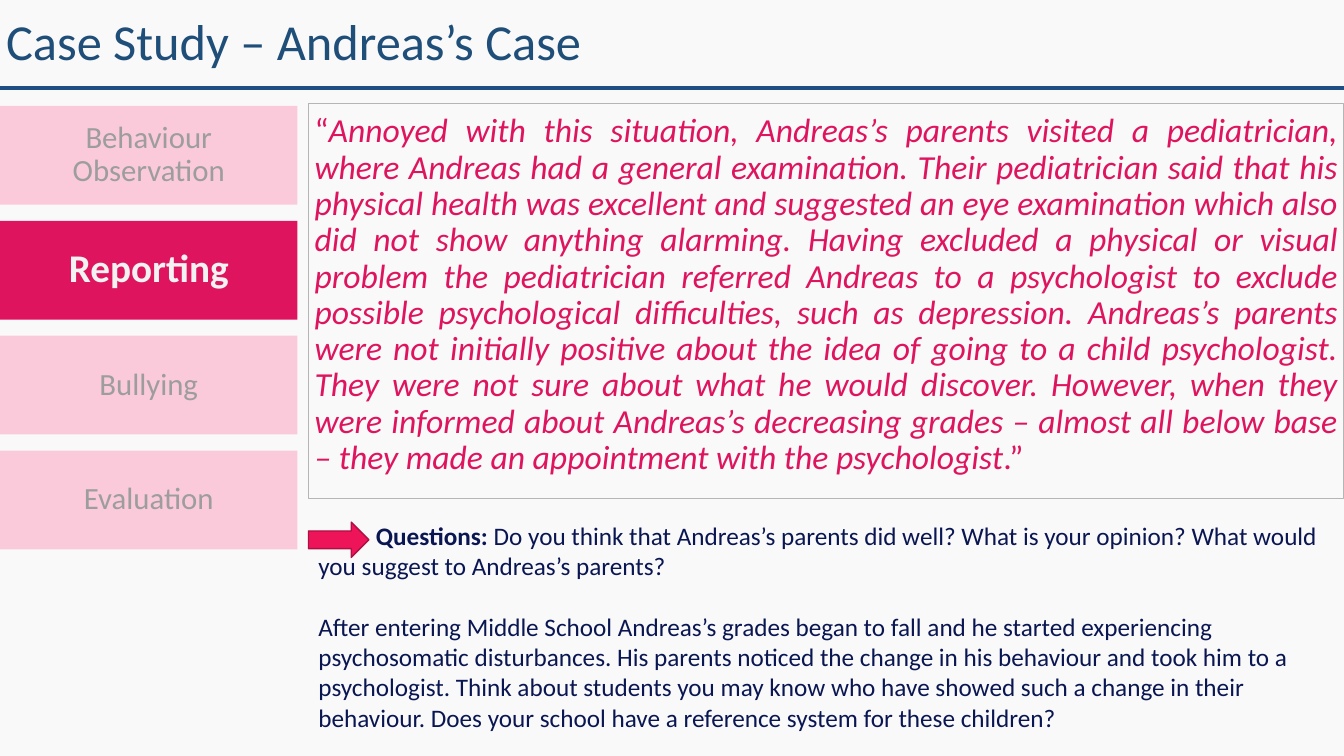
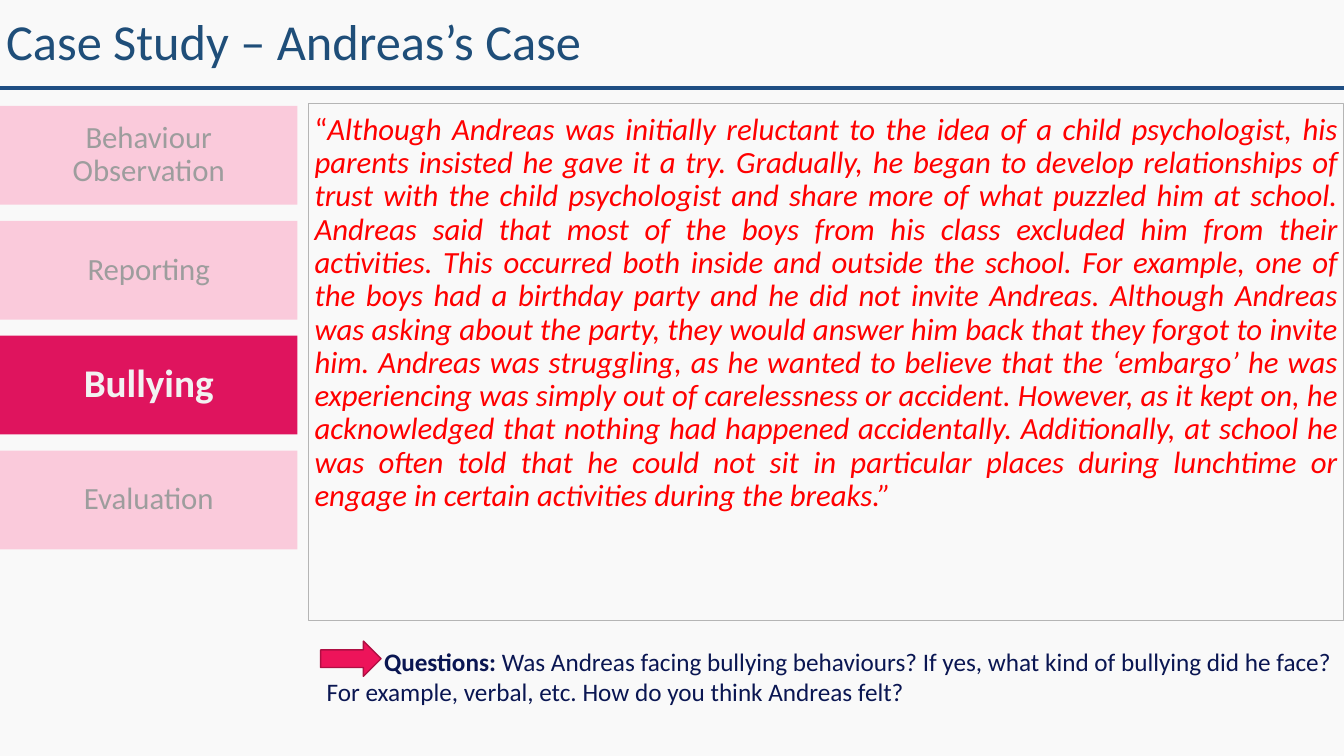
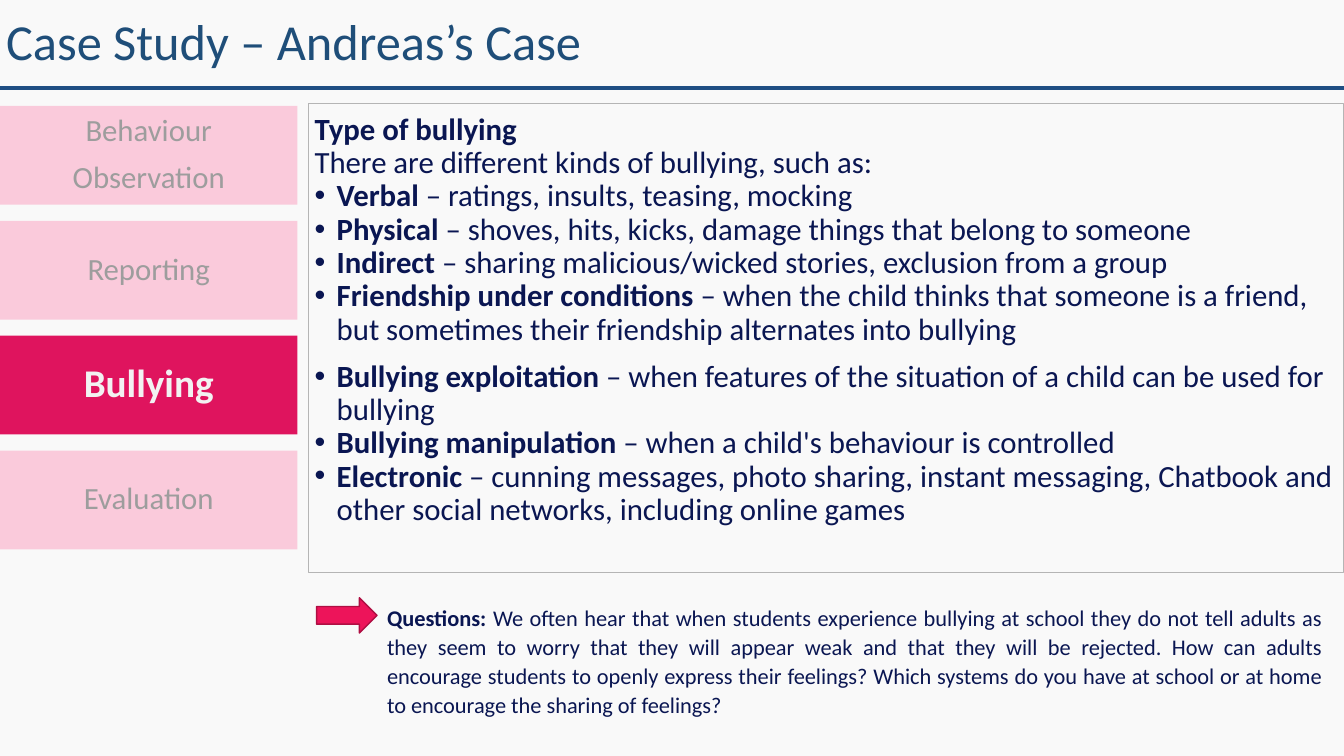
from lxml import etree
from pptx import Presentation
from pptx.dml.color import RGBColor
from pptx.enum.shapes import MSO_CONNECTOR, MSO_SHAPE
from pptx.enum.text import MSO_ANCHOR, MSO_AUTO_SIZE, PP_ALIGN
from pptx.oxml.ns import qn
from pptx.util import Pt

PX = 9144  # 100 px to the inch
W, H = 1333, 750
LEFT, CENTER, JUSTIFY = PP_ALIGN.LEFT, PP_ALIGN.CENTER, PP_ALIGN.JUSTIFY
TOP, MIDDLE = MSO_ANCHOR.TOP, MSO_ANCHOR.MIDDLE

PAPER = RGBColor(0xF9, 0xF9, 0xF9)
RULE_BLUE = RGBColor(0x1F, 0x4E, 0x83)
TITLE_BLUE = RGBColor(0x1F, 0x4E, 0x79)
NAVY = RGBColor(0x0A, 0x16, 0x52)
PINK = RGBColor(0xFA, 0xCA, 0xDB)
MAGENTA = RGBColor(0xDF, 0x14, 0x5E)
ARROW_FILL = RGBColor(0xED, 0x14, 0x5A)
ARROW_LINE = RGBColor(0xAF, 0x0F, 0x43)
RED = RGBColor(0xFF, 0x00, 0x00)
GREY = RGBColor(0x9D, 0x9D, 0x9D)
BORDER = RGBColor(0xB5, 0xB5, 0xB5)
OFF_WHITE = RGBColor(0xF2, 0xF2, 0xF2)

TITLE = "Case Study – Andreas’s Case"
TITLE_H = 87
TABS = ["Behaviour Observation", "Reporting", "Bullying", "Evaluation"]
TAB_TOP, TAB_W, TAB_H, TAB_STEP = 105, 295, 98, 114
BODY_LEFT, BODY_TOP = 306, 103
ARROW_W, ARROW_H = 60, 35

TITLE_P = {"alignment": LEFT, "line_spacing": 0.9, "space_before": Pt(0)}
TAB_P = {"alignment": CENTER, "line_spacing": 0.9, "space_before": Pt(10)}
QUOTE_P = {"alignment": JUSTIFY, "line_spacing": 0.9, "space_before": Pt(10)}
LIST_P = {"alignment": LEFT, "line_spacing": 0.9, "space_before": Pt(0)}
QUESTION_P = {"alignment": LEFT}
SMALL_QUESTION_P = {"alignment": JUSTIFY, "line_spacing": 1.07, "space_after": Pt(8)}

# A paragraph is its runs (text, style letters) and its own formats.
BESIDE_ARROW = {"indent": 57}
AFTER_GAP = {"space_before": Pt(22)}
SPACED = {"space_before": Pt(10)}
BULLET = {"margin": 22, "indent": -22, "bullet": "•"}

SLIDES = [
    {
        "active": "Reporting", "tabs": TABS, "body_h": 392,
        "body_font": {"size": Pt(24), "color": MAGENTA}, "body_format": QUOTE_P,
        "body": [([
            ("“", ""),
            ("Annoyed with this situation, Andreas’s parents visited a pediatrician, where "
             "Andreas had a general examination. Their pediatrician said that his physical "
             "health was excellent and suggested an eye examination which also did not show "
             "anything alarming. Having excluded a physical or visual problem the pediatrician "
             "referred Andreas to a psychologist to exclude possible psychological "
             "difficulties, such as depression. ", "i"),
            ("Andreas’s parents were not initially positive "
             "about the idea of going to a child psychologist. They were not sure about what "
             "he would discover. However, when they were informed about Andreas’s decreasing "
             "grades – almost all below base – they made an appointment with the "
             "psychologist", "i"),
            (".”", "")], {})],
        "arrow": (306, 518), "question_box": (306, 511, 1027, 222),
        "question_size": Pt(18), "question_format": QUESTION_P,
        "question": [
            ([("Questions:", "b"),
              (" Do you think that Andreas’s parents did well? What is your opinion? What "
               "would you suggest to Andreas’s parents?", "")], BESIDE_ARROW),
            ([("After entering Middle School Andreas’s grades began to fall and he started "
               "experiencing psychosomatic disturbances. His parents noticed the change in his "
               "behaviour and took him to a psychologist. Think about students you may know "
               "who have showed such a change in their behaviour. Does your school have a "
               "reference system for these children?", "")], AFTER_GAP)],
    },
    {
        "active": "Bullying", "tabs": TABS, "body_h": 513,
        "body_font": {"size": Pt(22), "color": RED}, "body_format": QUOTE_P,
        "body": [([
            ("“", ""),
            ("Although Andreas was initially reluctant to the idea of a child psychologist, "
             "his parents insisted he gave it a try. Gradually, he began to develop "
             "relationships of trust with the child psychologist and share more of what "
             "puzzled him at school. Andreas said that most of the boys from his class "
             "excluded him from their activities. This occurred both inside and outside the "
             "school. ", "i"),
            ("For example, one of the boys had a birthday party and he did not invite "
             "Andreas. Although Andreas was asking about the party, they would answer him back "
             "that they forgot to invite him. Andreas was struggling, as he wanted to believe "
             "that the ‘embargo’ he was experiencing was simply out of carelessness or "
             "accident. ", "i"),
            ("However, as it kept on, he acknowledged that nothing had happened "
             "accidentally. Additionally, at school he was often told that he could not sit in "
             "particular places during lunchtime or engage in certain activities during the "
             "breaks.”", "i")], {})],
        "arrow": (318, 636), "question_box": (314, 636, 1019, 101),
        "question_size": Pt(18), "question_format": QUESTION_P,
        "question": [
            ([("Questions: ", "b"),
              ("Was Andreas facing bullying behaviours? If yes, what kind of bullying did he "
               "face? For example, verbal, etc. How do you think Andreas felt?", "")],
             BESIDE_ARROW)],
    },
    {
        "active": "Bullying", "tabs": ["Behaviour\nObservation"] + TABS[1:], "body_h": 465,
        "body_font": {"size": Pt(22), "color": NAVY}, "body_format": LIST_P,
        "body": [
            ([("Type of bullying", "b")], SPACED),
            ([("There are different kinds of bullying, such as:", "")], {}),
            ([("Verbal", "b"), (" – ratings, insults, teasing, mocking", "")], BULLET),
            ([("Physical", "b"),
              (" – shoves, hits, kicks, damage things that belong to someone", "")], BULLET),
            ([("Indirect", "b"),
              (" – sharing malicious/wicked stories, exclusion from a group", "")], BULLET),
            ([("Friendship under conditions", "b"),
              (" – when the child thinks that someone is a friend, but sometimes their "
               "friendship alternates into bullying", "")], BULLET),
            ([("Bullying exploitation", "b"),
              (" – when features of the situation of a child can be used for bullying", "")],
             {**BULLET, **SPACED}),
            ([("Bullying manipulation", "b"),
              (" – when a child's behaviour is controlled", "")], BULLET),
            ([("Electronic", "b"),
              (" – cunning messages, photo sharing, instant messaging, Chatbook and other "
               "social networks, including online games", "")], BULLET)],
        "arrow": (314, 593), "question_box": (374, 593, 948, 125),
        "question_size": Pt(16), "question_format": SMALL_QUESTION_P,
        "question": [
            ([("Questions: ", "b"),
              ("We often hear that when students experience bullying at school they do not "
               "tell adults as they seem to worry that they will appear weak and that they "
               "will be rejected. How can adults encourage students to openly express their "
               "feelings? Which systems do you have at school or at home to encourage the "
               "sharing of feelings?", "")], {})],
    },
]


def write(tf, paragraphs, font, p_format, anchor=TOP, margins=(6, 6)):
    """Fill a text frame; margins are horizontal and vertical, in px."""
    tf.word_wrap = True
    tf.auto_size = MSO_AUTO_SIZE.NONE
    tf.vertical_anchor = anchor
    tf.margin_left = tf.margin_right = margins[0] * PX
    tf.margin_top = tf.margin_bottom = margins[1] * PX
    for i, (runs, own_format) in enumerate(paragraphs):
        p = tf.add_paragraph() if i else tf.paragraphs[0]
        settings = {**p_format, **own_format}
        pPr = p._p.get_or_add_pPr()
        pPr.set("marL", str(settings.pop("margin", 0) * PX))
        pPr.set("indent", str(settings.pop("indent", 0) * PX))
        bullet = settings.pop("bullet", None)
        for name, value in settings.items():
            setattr(p, name, value)
        if bullet:
            etree.SubElement(pPr, qn("a:buChar")).set("char", bullet)
        else:
            etree.SubElement(pPr, qn("a:buNone"))
        for text, style in runs:
            r = p.add_run()
            r.text = text
            r.font.name = "Calibri"
            r.font.size = font["size"]
            r.font.color.rgb = font["color"]
            r.font.bold = "b" in style
            r.font.italic = "i" in style


def add_box(s, kind, box, fill):
    shape = s.shapes.add_shape(kind, *(n * PX for n in box))
    shape.shadow.inherit = False
    shape.fill.solid()
    shape.fill.fore_color.rgb = fill
    shape.line.fill.background()
    return shape


prs = Presentation()
prs.slide_width, prs.slide_height = W * PX, H * PX
master = prs.slide_master
master.background.fill.solid()
master.background.fill.fore_color.rgb = PAPER
layout = prs.slide_layouts[1]

for number, page in enumerate(SLIDES):
    s = prs.slides.add_slide(layout)

    if number == 0:  # the rule under the title moves to the master
        rule = s.shapes.add_connector(MSO_CONNECTOR.STRAIGHT, 0, TITLE_H * PX,
                                      W * PX, TITLE_H * PX)
        rule.line.color.rgb = RULE_BLUE
        rule.line.width = Pt(3)
        etree.SubElement(rule.element.spPr, qn("a:effectLst"))
        rule.element.xpath(".//p:cNvPr")[0].set("id", "20")
        master.shapes.element.append(rule.element)

    title = s.shapes.title
    title.left, title.top, title.width, title.height = 0, 0, W * PX, TITLE_H * PX
    write(title.text_frame, [([(TITLE, "")], {})],
          {"size": Pt(36), "color": TITLE_BLUE}, TITLE_P, MIDDLE)

    for i, label in enumerate(page["tabs"]):
        active = label == page["active"]
        tab = add_box(s, MSO_SHAPE.RECTANGLE,
                      (0, TAB_TOP + i * TAB_STEP, TAB_W, TAB_H), MAGENTA if active else PINK)
        font = {"size": Pt(28 if active else 22), "color": OFF_WHITE if active else GREY}
        lines = [([(line, "b" if active else "")], {}) for line in label.split("\n")]
        write(tab.text_frame, lines, font, TAB_P, MIDDLE)

    body = s.placeholders[1]
    body.left, body.top = BODY_LEFT * PX, BODY_TOP * PX
    body.width, body.height = (W - BODY_LEFT) * PX, page["body_h"] * PX
    body.line.color.rgb = BORDER
    body.line.width = Pt(0.75)
    write(body.text_frame, page["body"], page["body_font"], page["body_format"],
          margins=(6, 10))

    question = s.shapes.add_textbox(*(n * PX for n in page["question_box"]))
    write(question.text_frame, page["question"],
          {"size": page["question_size"], "color": NAVY}, page["question_format"],
          margins=(10, 5))

    arrow = add_box(s, MSO_SHAPE.RIGHT_ARROW, (*page["arrow"], ARROW_W, ARROW_H), ARROW_FILL)
    arrow.line.color.rgb = ARROW_LINE
    arrow.line.width = Pt(1)

prs.save("out.pptx")
